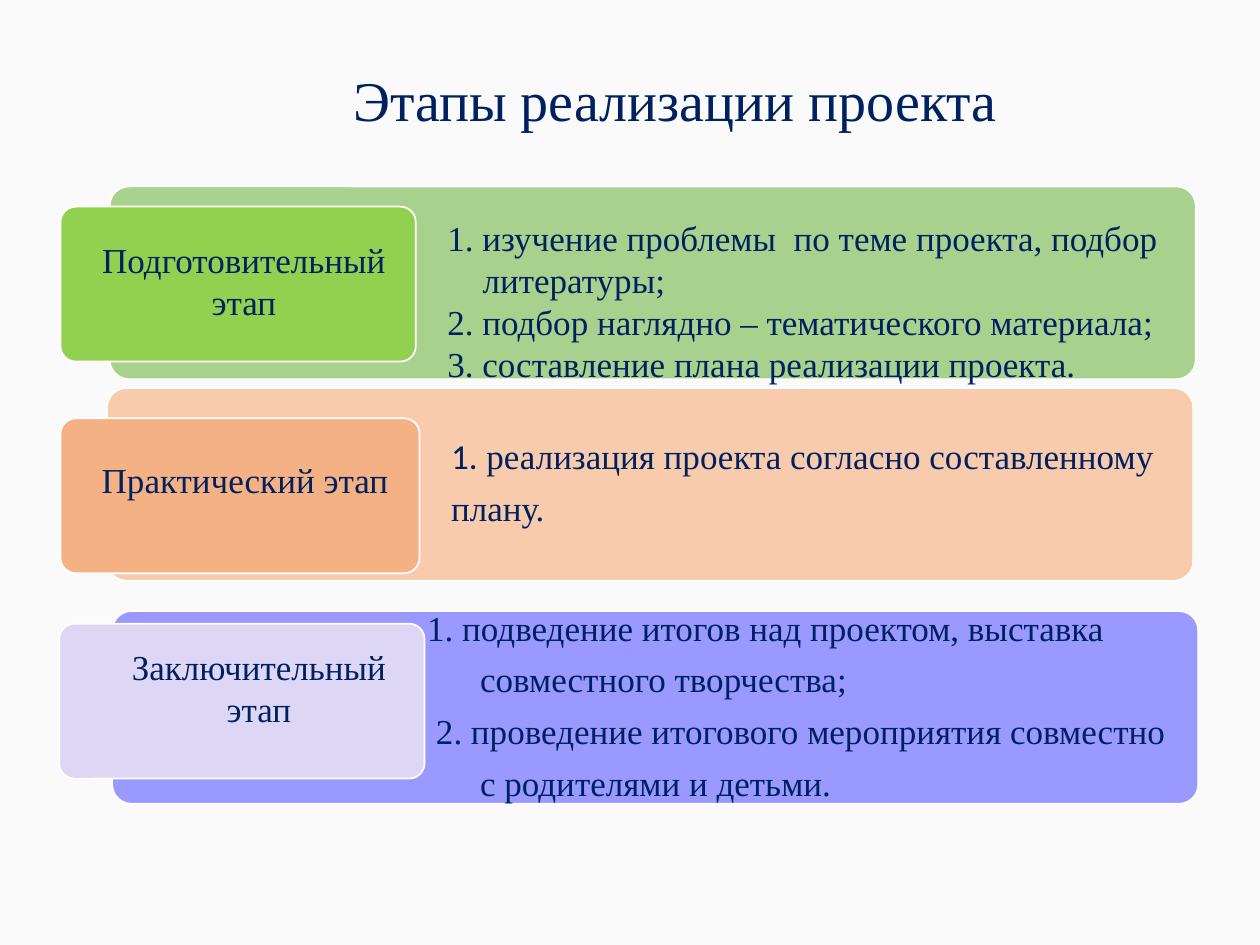
from dataclasses import dataclass

from pptx import Presentation
from pptx.dml.color import RGBColor
from pptx.enum.shapes import MSO_SHAPE
from pptx.enum.text import MSO_ANCHOR, PP_ALIGN
from pptx.util import Inches, Pt

BACKGROUND = RGBColor(0xFA, 0xFA, 0xFA)
WHITE = RGBColor(0xFF, 0xFF, 0xFF)
NAVY = RGBColor(0x00, 0x20, 0x60)
GREEN = RGBColor(0x92, 0xD0, 0x50)
LIGHT_GREEN = RGBColor(0xA9, 0xD1, 0x8E)
ORANGE = RGBColor(0xF4, 0xB1, 0x83)
LIGHT_ORANGE = RGBColor(0xF8, 0xCB, 0xAD)
VIOLET = RGBColor(0x99, 0x99, 0xFF)
LIGHT_VIOLET = RGBColor(0xDD, 0xD7, 0xF5)

SERIF = "Times New Roman"
SANS = "Calibri"
PANEL_WIDTH, PANEL_HEIGHT = 8.62, 1.53
CARD_HEIGHT = 1.23
TEXT_OFFSET, TEXT_WIDTH = 1.88, 6.75


@dataclass
class Stage:
    """Boxes are (left, top, width, height); lines are (indent, text runs)."""
    name: str
    panel_position: tuple
    panel_color: RGBColor
    card_position: tuple
    card_width: float
    card_color: RGBColor
    label_box: tuple
    lines: list
    text_format: dict


STAGES = [
    Stage("Подготовительный этап", (0.87, 1.48), LIGHT_GREEN,
          (0.48, 1.64), 2.82, GREEN, (0.69, 1.84, 2.49, 0.77),
          [(0.69, ["1. изучение проблемы  по теме проекта, подбор"]),
           (0.97, ["литературы;"]),
           (0.69, ["2. подбор наглядно – тематического материала;"]),
           (0.69, ["3. составление плана реализации проекта."])],
          {"inset": 0.11, "top_inset": 0.24}),
    Stage("Практический этап", (0.85, 3.08), LIGHT_ORANGE,
          (0.48, 3.32), 2.85, ORANGE, (0.7, 3.59, 2.49, 0.44),
          [(0.77, [("1.", SANS), " реализация проекта согласно составленному"]),
           (0.77, ["плану."])],
          {"inset": 0.08, "anchor": MSO_ANCHOR.MIDDLE,
           "line_spacing": 0.9, "space_after": 8}),
    Stage("Заключительный этап", (0.89, 4.85), VIOLET,
          (0.47, 4.95), 2.9, LIGHT_VIOLET, (0.85, 5.07, 2.41, 0.77),
          [(0.55, ["1. подведение итогов над проектом, выставка"]),
           (0.97, ["совместного творчества;"]),
           (0.62, ["2. проведение итогового мероприятия совместно"]),
           (0.97, ["с родителями и детьми."])],
          {"inset": 0.07, "anchor": MSO_ANCHOR.MIDDLE,
           "line_spacing": 0.9, "space_after": 8}),
]


def add_text(slide, box, lines, *, size=20, align=PP_ALIGN.LEFT,
             anchor=MSO_ANCHOR.TOP, inset=None, top_inset=None,
             line_spacing=None, space_after=None):
    """Add a text box; a run is a string or a (string, font name) pair."""
    frame = slide.shapes.add_textbox(*map(Inches, box)).text_frame
    frame.word_wrap = True
    frame.vertical_anchor = anchor
    if inset is not None:
        frame.margin_left = frame.margin_right = Inches(inset)
        frame.margin_top = frame.margin_bottom = Inches(inset)
    if top_inset is not None:
        frame.margin_top = Inches(top_inset)
    for index, (indent, runs) in enumerate(lines):
        paragraph = frame.add_paragraph() if index else frame.paragraphs[0]
        paragraph.alignment = align
        if indent:
            paragraph._p.get_or_add_pPr().set("marL", str(Inches(indent)))
        if line_spacing is not None:
            paragraph.line_spacing = line_spacing
        if space_after is not None:
            paragraph.space_after = Pt(space_after)
        for item in runs:
            text, font_name = (item, SERIF) if isinstance(item, str) else item
            run = paragraph.add_run()
            run.text = text
            run.font.name = font_name
            run.font.size = Pt(size)
            run.font.color.rgb = NAVY


def add_rounded_box(slide, box, color):
    shape = slide.shapes.add_shape(MSO_SHAPE.ROUNDED_RECTANGLE, *map(Inches, box))
    shape.adjustments[0] = 0.1
    shape.shadow.inherit = False
    shape.fill.solid()
    shape.fill.fore_color.rgb = color
    shape.line.color.rgb = WHITE
    shape.line.width = Pt(1)


def add_stage(slide, stage):
    left, top = stage.panel_position
    add_rounded_box(slide, (left, top, PANEL_WIDTH, PANEL_HEIGHT), stage.panel_color)
    add_text(slide, (left + TEXT_OFFSET, top, TEXT_WIDTH, PANEL_HEIGHT),
             stage.lines, **stage.text_format)
    add_rounded_box(slide, (*stage.card_position, stage.card_width, CARD_HEIGHT),
                    stage.card_color)
    add_text(slide, stage.label_box, [(0, [stage.name])], align=PP_ALIGN.CENTER)


def main():
    presentation = Presentation()
    presentation.slide_width = Inches(10)
    presentation.slide_height = Inches(7.5)
    slide = presentation.slides.add_slide(presentation.slide_layouts[6])
    slide.background.fill.solid()
    slide.background.fill.fore_color.rgb = BACKGROUND

    add_text(slide, (1.05, 0.42, 8.62, 0.8), [(0, ["Этапы реализации проекта"])],
             size=32, align=PP_ALIGN.CENTER, anchor=MSO_ANCHOR.MIDDLE,
             line_spacing=0.9)
    for stage in STAGES:
        add_stage(slide, stage)
    presentation.save("out.pptx")


if __name__ == "__main__":
    main()
